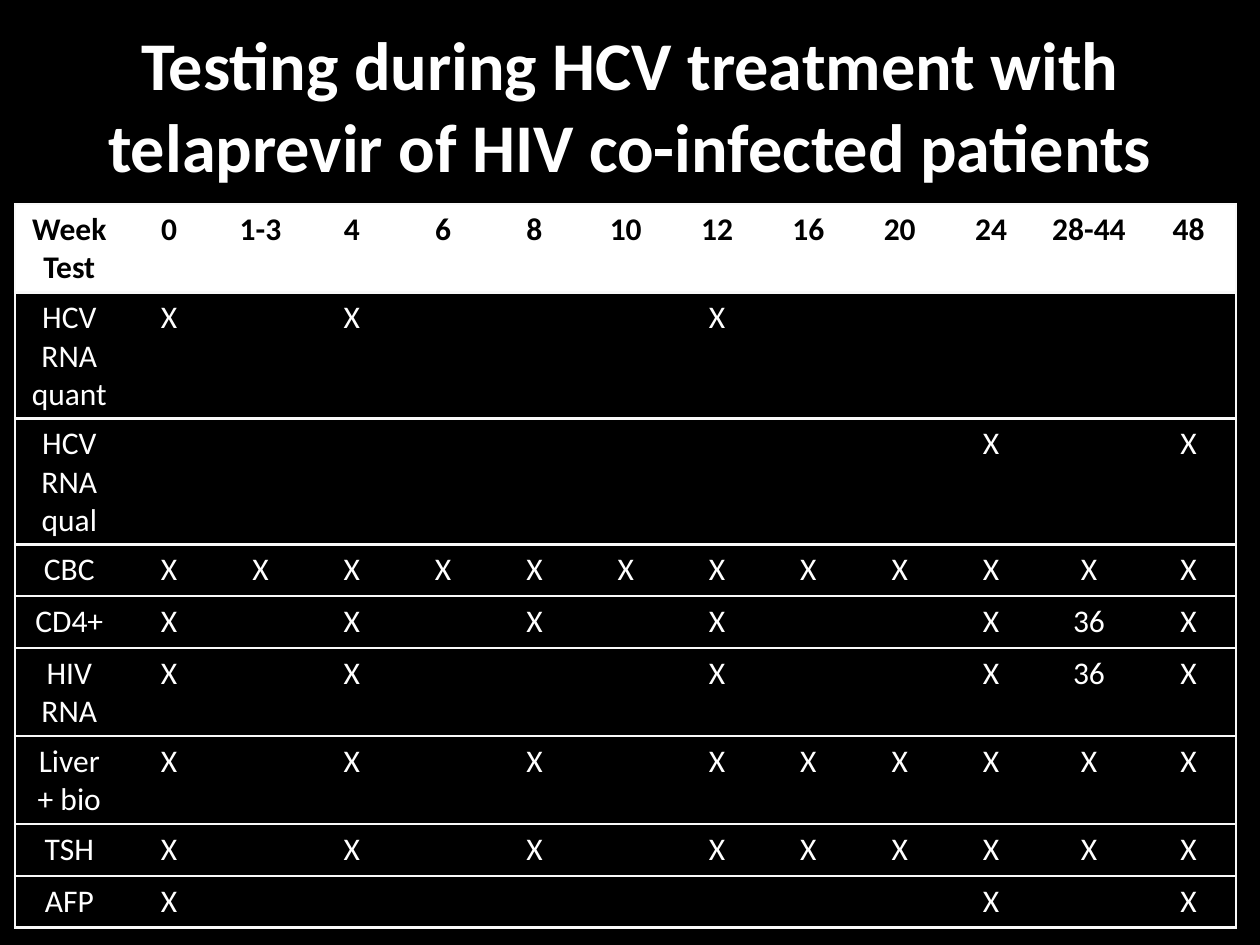
from lxml.etree import SubElement
from pptx import Presentation
from pptx.dml.color import RGBColor
from pptx.enum.text import MSO_ANCHOR, PP_ALIGN
from pptx.oxml.ns import qn
from pptx.util import Inches, Pt

BLACK = RGBColor(0x00, 0x00, 0x00)
WHITE = RGBColor(0xFF, 0xFF, 0xFF)
RULE = RGBColor(0xF9, 0xF9, 0xF9)

WEEKS = ["0", "1-3", "4", "6", "8", "10", "12", "16", "20", "24", "28-44", "48"]
TESTS = {
    "HCV RNA quant": {"0": "X", "4": "X", "12": "X"},
    "HCV RNA qual": {"24": "X", "48": "X"},
    "CBC": dict.fromkeys(WEEKS, "X"),
    "CD4+": {"0": "X", "4": "X", "8": "X", "12": "X", "24": "X", "28-44": "36", "48": "X"},
    "HIV RNA": {"0": "X", "4": "X", "12": "X", "24": "X", "28-44": "36", "48": "X"},
    "Liver + bio": dict.fromkeys(["0", "4", "8", *WEEKS[6:]], "X"),
    "TSH": dict.fromkeys(["0", "4", "8", *WEEKS[6:]], "X"),
    "AFP": {"0": "X", "24": "X", "48": "X"},
}
COL_WIDTHS = [0.86] + [0.725] * 10 + [0.83, 0.75]
ROW_HEIGHT = 0.41


def write(tf, text, size=18, color=WHITE, bold=False):
    """Fill a text frame with centred text, one paragraph per line."""
    for i, line in enumerate(text.split("\n")):
        p = tf.paragraphs[0] if i == 0 else tf.add_paragraph()
        p.alignment = PP_ALIGN.CENTER
        p.font.size = Pt(size)
        if line:
            r = p.add_run()
            r.text = line
            r.font.name = "Calibri"
            r.font.size = Pt(size)
            r.font.bold = bold
            r.font.color.rgb = color


def set_borders(cell, **visible):
    """Draw the sides given as true and hide the others."""
    tcPr = cell._tc.get_or_add_tcPr()
    for side, shown in visible.items():
        ln = SubElement(tcPr, qn(f"a:ln{side}"), w=str(Pt(1.5)))
        if shown:
            fill = SubElement(ln, qn("a:solidFill"))
            SubElement(fill, qn("a:srgbClr"), val=str(RULE))
        else:
            SubElement(ln, qn("a:noFill"))


prs = Presentation()
prs.slide_width, prs.slide_height = Inches(10), Inches(7.5)
s = prs.slides.add_slide(prs.slide_layouts[6])
s.background.fill.solid()
s.background.fill.fore_color.rgb = BLACK

title = s.shapes.add_textbox(Inches(0.5), Inches(0.2), Inches(9), Inches(1.25))
tf = title.text_frame
tf.word_wrap = True
tf.vertical_anchor = MSO_ANCHOR.MIDDLE
write(tf, "Testing during HCV treatment with telaprevir of HIV co-infected patients",
      size=39, bold=True)

rows = [["Week\nTest", *WEEKS]]
rows += [[test, *(marks.get(week, "") for week in WEEKS)] for test, marks in TESTS.items()]
table = s.shapes.add_table(
    len(rows), len(COL_WIDTHS), Inches(0.12), Inches(1.62),
    Inches(sum(COL_WIDTHS)), Inches(ROW_HEIGHT * len(rows))).table
table.horz_banding = False
for column, width in zip(table.columns, COL_WIDTHS):
    column.width = Inches(width)

last_col = len(COL_WIDTHS) - 1
for i, row in enumerate(rows):
    table.rows[i].height = Inches(ROW_HEIGHT)
    header = i == 0
    for j, text in enumerate(row):
        cell = table.cell(i, j)
        set_borders(cell, L=j == 0, R=j == last_col, T=True, B=True)
        cell.fill.solid()
        cell.fill.fore_color.rgb = WHITE if header else BLACK
        write(cell.text_frame, text, color=BLACK if header else WHITE, bold=header)

prs.save("out.pptx")
